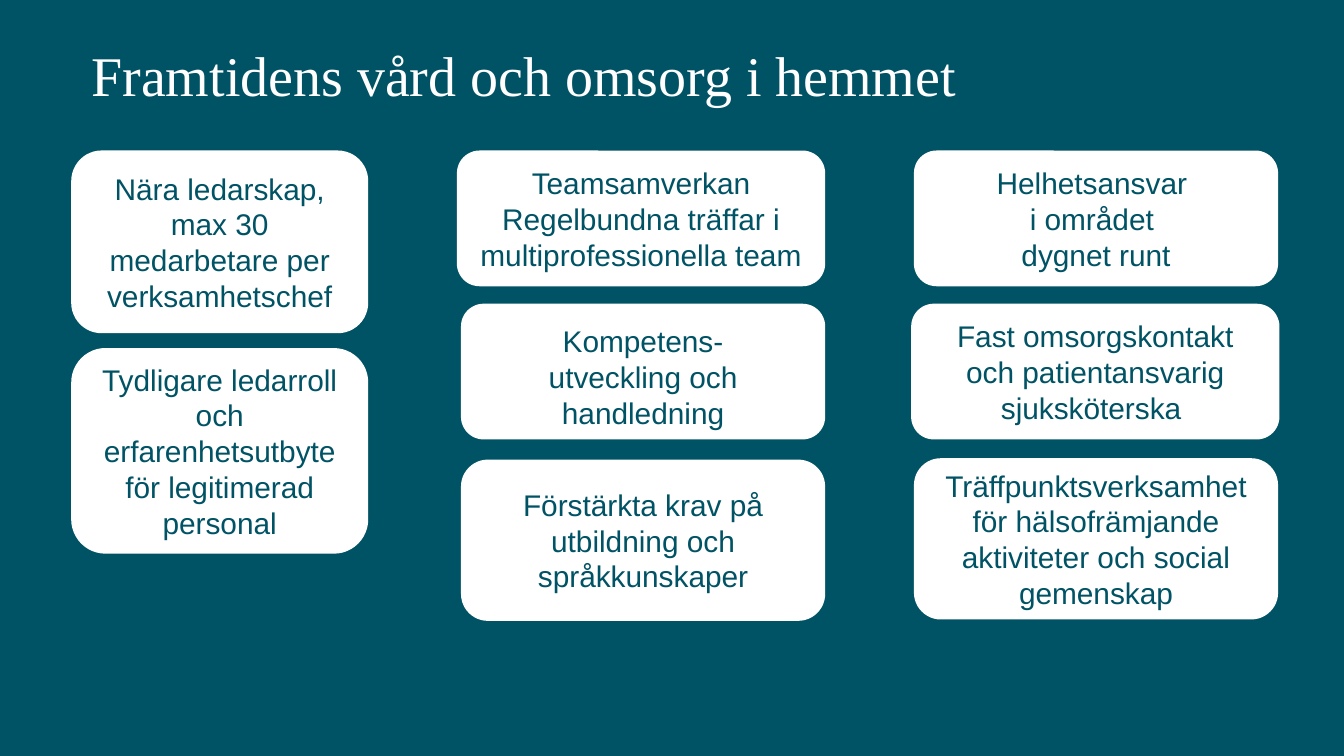
"""Build a slide on future health and social care at home."""
from dataclasses import dataclass

from pptx import Presentation
from pptx.dml.color import RGBColor
from pptx.enum.shapes import MSO_SHAPE as SHAPE
from pptx.enum.text import MSO_ANCHOR as ANCHOR, PP_ALIGN as ALIGN
from pptx.slide import Slide
from pptx.text.text import Font
from pptx.util import Inches, Pt

COLORS = {"teal": "005365", "white": "FFFFFF"}
ROW_TOPS = (1.12, 2.26, 3.41)


@dataclass
class Card:
    left: float
    top: float
    width: float
    height: float
    text: str
    inset_top: float = 0.1


CARDS = [
    Card(0.53, ROW_TOPS[0], 2.21, 1.36, "Nära ledarskap, max 30 medarbetare per verksamhetschef"),
    Card(0.53, 2.59, 2.21, 1.53,
         "Tydligare ledarroll och erfarenhetsutbyte för legitimerad personal"),
    Card(3.4, ROW_TOPS[0], 2.74, 1.01,
         "Teamsamverkan Regelbundna träffar i multiprofessionella team "),
    Card(3.43, ROW_TOPS[1], 2.71, 1.01, "Kompetens-\nutveckling och handledning", 0.17),
    Card(3.43, 3.42, 2.71, 1.2, "Förstärkta krav på utbildning och språkkunskaper"),
    Card(6.8, ROW_TOPS[0], 2.71, 1.01, "Helhetsansvar \ni området \ndygnet runt"),
    Card(6.78, ROW_TOPS[1], 2.74, 1.01, "Fast omsorgskontakt och patientansvarig sjuksköterska "),
    Card(6.8, ROW_TOPS[2], 2.71, 1.2,
         "Träffpunktsverksamhet för hälsofrämjande aktiviteter och social gemenskap"),
]


def rgb(name: str) -> RGBColor:
    """Return the named colour."""
    return RGBColor.from_string(COLORS[name])


def set_font(font: Font, name: str, size: float, color: str) -> None:
    """Set the typeface, size and colour."""
    font.name, font.size = name, Pt(size)
    font.color.rgb = rgb(color)


def add_title(s: Slide, text: str) -> None:
    """Place and format the slide title."""
    sp = s.shapes.title
    sp.left, sp.top, sp.width, sp.height = map(Inches, (0.68, 0.22, 7.36, 0.63))
    tf = sp.text_frame
    tf.margin_left = tf.margin_right = tf.margin_top = 0
    tf.margin_bottom = Inches(0.04)
    tf.vertical_anchor = ANCHOR.BOTTOM
    p = tf.paragraphs[0]
    p.text = text
    p.alignment = ALIGN.LEFT
    p.line_spacing = 0.9
    set_font(p.font, "Times New Roman", 30, "white")


def add_card(s: Slide, card: Card) -> None:
    """Draw a rounded white card with centred text."""
    box = map(Inches, (card.left, card.top, card.width, card.height))
    sp = s.shapes.add_shape(SHAPE.ROUNDED_RECTANGLE, *box)
    sp.shadow.inherit = False
    sp.fill.solid()
    sp.fill.fore_color.rgb = rgb("white")
    sp.line.fill.background()
    tf = sp.text_frame
    tf.word_wrap = True
    tf.vertical_anchor = ANCHOR.MIDDLE
    tf.margin_left = tf.margin_right = tf.margin_bottom = Inches(0.1)
    tf.margin_top = Inches(card.inset_top)
    p = tf.paragraphs[0]
    p.text = card.text
    p.alignment = ALIGN.CENTER
    set_font(p.font, "Arial", 16, "teal")


def main() -> None:
    """Build and save the presentation."""
    prs = Presentation()
    prs.slide_width = Inches(10)
    prs.slide_height = prs.slide_width * 9 // 16
    s = prs.slides.add_slide(prs.slide_layouts[5])
    s.background.fill.solid()
    s.background.fill.fore_color.rgb = rgb("teal")
    add_title(s, "Framtidens vård och omsorg i hemmet")
    for card in CARDS:
        add_card(s, card)
    prs.save("out.pptx")


if __name__ == "__main__":
    main()
